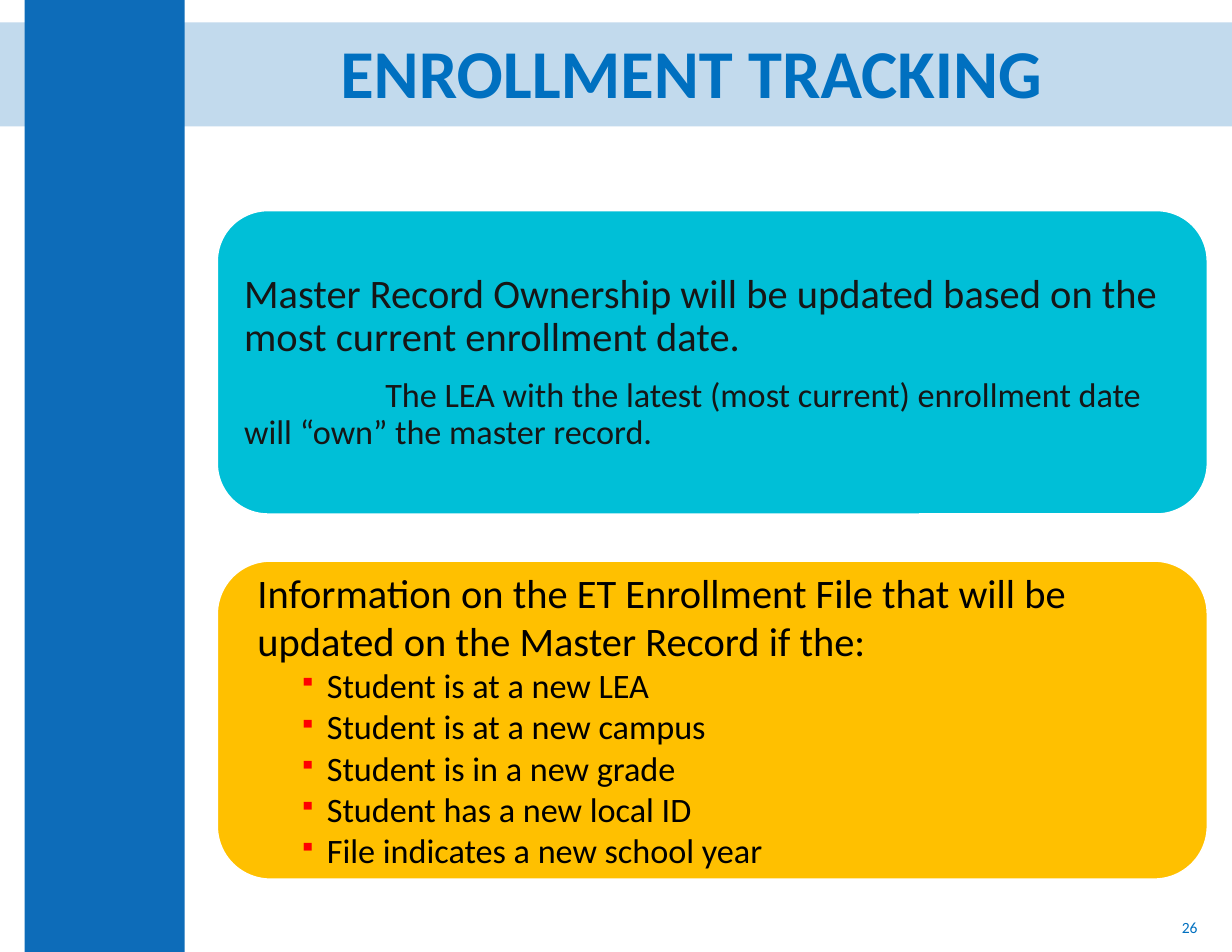
from dataclasses import dataclass

from lxml import etree
from pptx import Presentation
from pptx.dml.color import RGBColor
from pptx.enum.shapes import MSO_SHAPE as Shape
from pptx.enum.text import MSO_ANCHOR as Anchor, PP_ALIGN as Align
from pptx.oxml.ns import qn
from pptx.util import Inches, Pt


@dataclass(frozen=True)
class Theme:
    font: str = "Calibri"
    band: str = "0D6CB9"
    accent: str = "0070C0"
    ownership: str = "00BFD7"
    updates: str = "FFC000"
    white: str = "FFFFFF"
    dark: str = "161616"
    black: str = "000000"
    bullet: str = "FF0000"
    title_size: int = 44
    lead_size: int = 26
    detail_size: int = 22
    number_size: int = 10


THEME = Theme()


def add_panel(slide, kind, box, color, opacity=None, outline=None):
    shape = slide.shapes.add_shape(kind, *map(Inches, box))
    shape.shadow.inherit = False
    shape.fill.solid()
    shape.fill.fore_color.rgb = RGBColor.from_string(color)
    if outline:
        shape.line.color.rgb = RGBColor.from_string(outline)
        shape.line.width = Pt(1)
    else:
        shape.line.fill.background()
    if opacity:
        fill_color = shape.fill._xPr.find(qn("a:solidFill"))[0]
        etree.SubElement(fill_color, qn("a:alpha"), val=str(opacity * 1000))


def add_frame(slide, box, anchor=Anchor.MIDDLE, inset=None):
    frame = slide.shapes.add_textbox(*map(Inches, box)).text_frame
    frame.word_wrap = True
    frame.vertical_anchor = anchor
    if inset:
        frame.margin_left = frame.margin_right = Inches(inset)
        frame.margin_top = frame.margin_bottom = Inches(inset)
    return frame


def add_text(frame, text, size, color, bold=False, align=Align.LEFT,
             line_spacing=None, space_after=None, margin=0, indent=0, bullet=None):
    paragraph = frame.paragraphs[0]
    if paragraph.runs:
        paragraph = frame.add_paragraph()
    paragraph.alignment = align
    if line_spacing:
        paragraph.line_spacing = line_spacing
    if space_after:
        paragraph.space_after = Pt(space_after)
    properties = paragraph._p.get_or_add_pPr()
    properties.set("marL", str(Inches(margin)))
    properties.set("indent", str(Inches(indent)))
    if bullet:
        bullet_color = etree.SubElement(properties, qn("a:buClr"))
        etree.SubElement(bullet_color, qn("a:srgbClr"), val=THEME.bullet)
        etree.SubElement(properties, qn("a:buSzPct"), val="70000")
        etree.SubElement(properties, qn("a:buChar"), char=bullet)
    run = paragraph.add_run()
    run.text = text
    run.font.name = THEME.font
    run.font.size = Pt(size)
    run.font.bold = bold
    run.font.color.rgb = RGBColor.from_string(color)


def add_backdrop(slide, box):
    left, top, width, height = box
    add_panel(slide, Shape.RECTANGLE, (left, top + 0.2, width, 0.93), THEME.band, opacity=25)
    add_panel(slide, Shape.RECTANGLE, (left + 0.22, top, 1.43, height), THEME.band)


def add_title(slide, box):
    add_text(add_frame(slide, box), "ENROLLMENT TRACKING", THEME.title_size, THEME.accent,
             bold=True, align=Align.CENTER, line_spacing=0.9)


def add_page_number(slide, box):
    add_text(add_frame(slide, box), "26", THEME.number_size, THEME.accent, align=Align.RIGHT)


def add_ownership_card(slide, box):
    left, top, width, height = box
    add_panel(slide, Shape.ROUNDED_RECTANGLE, box, THEME.ownership, outline=THEME.white)
    margin = 0.13
    inner = (left + margin, top + margin, width - 2 * margin, height - 2 * margin)
    frame = add_frame(slide, inner, inset=0.11)
    add_text(frame, "Master Record Ownership will be updated based on the most current "
             "enrollment date.", THEME.lead_size, THEME.dark, line_spacing=0.9, space_after=11)
    add_text(frame, "The LEA with the latest (most current) enrollment date will “own” the "
             "master record.", THEME.detail_size, THEME.dark, line_spacing=0.9, indent=1.26)


def add_updates_card(slide, box):
    left, top, width, height = box
    add_panel(slide, Shape.ROUNDED_RECTANGLE, box, THEME.updates, outline=THEME.white)
    frame = add_frame(slide, (left + 0.26, top + 0.01, width - 0.72, height - 0.01), Anchor.TOP)
    add_text(frame, "Information on the ET Enrollment File that will be updated on the Master "
             "Record if the:", THEME.lead_size, THEME.black)
    for change in ("Student is at a new LEA", "Student is at a new campus",
                   "Student is in a new grade", "Student has a new local ID",
                   "File indicates a new school year"):
        add_text(frame, change, THEME.detail_size, THEME.black,
                 margin=0.62, indent=-0.25, bullet="▪")


def main():
    presentation = Presentation()
    presentation.slide_width = Inches(11)
    presentation.slide_height = Inches(8.5)
    slide = presentation.slides.add_slide(presentation.slide_layouts[6])
    add_backdrop(slide, (0, 0, 11, 8.5))
    add_page_number(slide, (8.31, 8.05, 2.48, 0.45))
    add_title(slide, (1.83, 0.23, 8.69, 0.9))
    add_ownership_card(slide, (1.94, 1.88, 8.84, 2.71))
    add_updates_card(slide, (1.94, 5.01, 8.84, 2.84))
    presentation.save("out.pptx")


if __name__ == "__main__":
    main()
